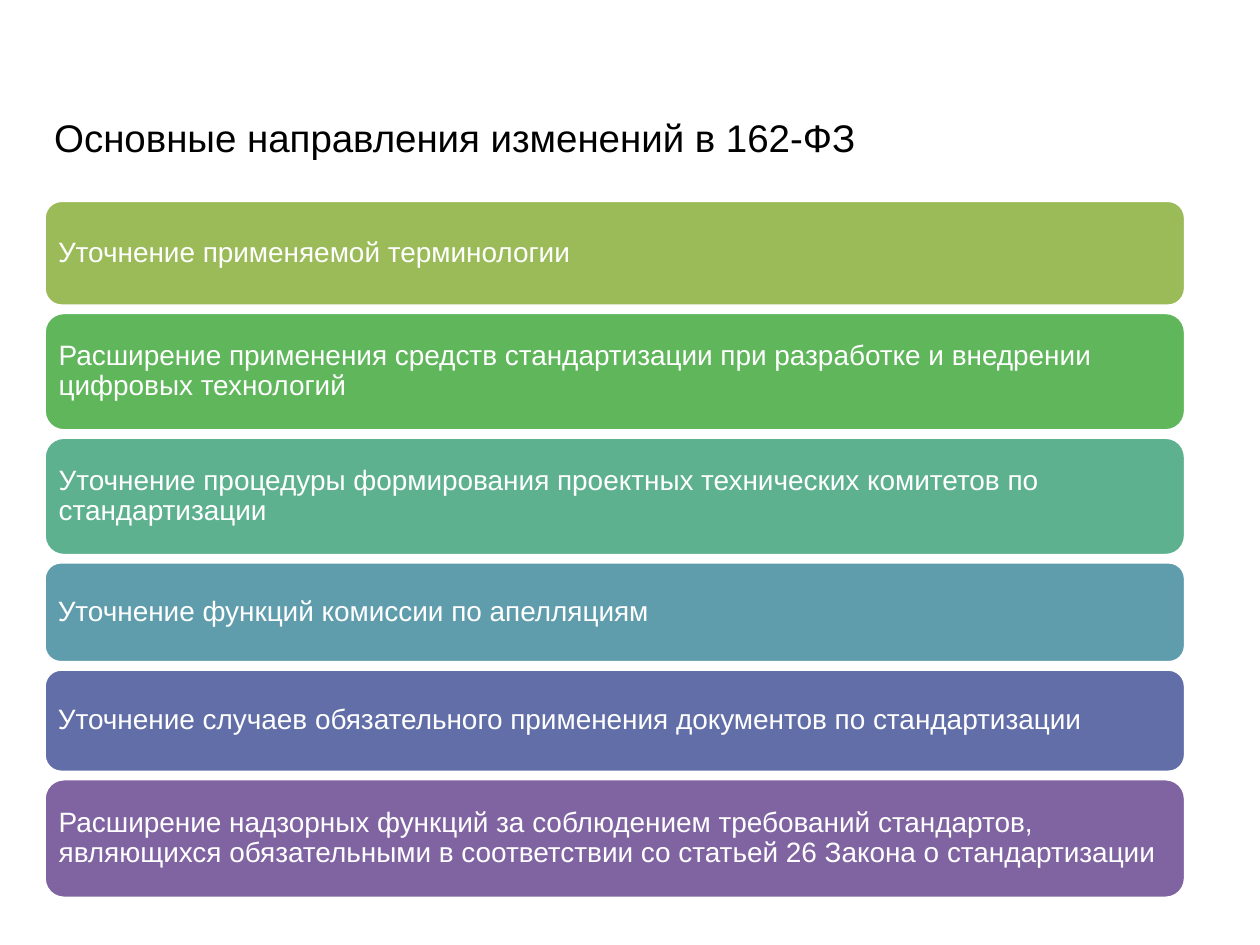
from pptx import Presentation
from pptx.dml.color import RGBColor
from pptx.enum.shapes import MSO_SHAPE as SHAPE
from pptx.enum.text import MSO_ANCHOR as ANCHOR, MSO_AUTO_SIZE as AUTO_SIZE, PP_ALIGN as ALIGN
from pptx.util import Inches, Pt

TITLE = "Основные направления изменений в 162-ФЗ"
LEFT, TOP, WIDTH, GAP = 0.35, 1.59, 9.06, 0.05

# Text, fill colour, height in inches
DIRECTIONS = [
    ("Уточнение применяемой терминологии", "9BBB59", 0.84),
    ("Расширение применения средств стандартизации при разработке и внедрении "
     "цифровых технологий", "5FB65B", 0.94),
    ("Уточнение процедуры формирования проектных технических комитетов по "
     "стандартизации", "5DB18E", 0.94),
    ("Уточнение функций комиссии по апелляциям", "5F9DAC", 0.8),
    ("Уточнение случаев обязательного применения документов по стандартизации",
     "626EA7", 0.82),
    ("Расширение надзорных функций за соблюдением требований стандартов, "
     "являющихся обязательными в соответствии со статьей 26 Закона о стандартизации",
     "8064A2", 0.95),
]


def rgb(color):
    return RGBColor.from_string(color)


def write(sp, text, size, color, anchor, inset, spacing):
    tf = sp.text_frame
    tf.auto_size = AUTO_SIZE.NONE
    tf.word_wrap = True
    tf.vertical_anchor = anchor
    tf.margin_left = tf.margin_right = tf.margin_top = tf.margin_bottom = Inches(inset)
    p = tf.paragraphs[0]
    p.alignment = ALIGN.LEFT
    p.line_spacing = spacing
    r = p.add_run()
    r.text = text
    r.font.name = "Arial"
    r.font.size = Pt(size)
    r.font.color.rgb = rgb(color)


def place_title(slide, text):
    title = slide.shapes.title
    title.left, title.top = Inches(0.43), Inches(0.99)
    title.width, title.height = Inches(9.41), Inches(0.39)
    write(title, text, size=22, color="000000", anchor=ANCHOR.TOP, inset=0, spacing=Pt(20))


def add_bar(slide, text, fill, top, height):
    sp = slide.shapes.add_shape(SHAPE.ROUNDED_RECTANGLE, Inches(LEFT), Inches(top),
                                Inches(WIDTH), Inches(height))
    sp.shadow.inherit = False
    sp.fill.solid()
    sp.fill.fore_color.rgb = rgb(fill)
    sp.line.color.rgb = rgb("FFFFFF")
    sp.line.width = Pt(2)
    write(sp, text, size=16, color="FFFFFF", anchor=ANCHOR.MIDDLE, inset=0.07, spacing=0.9)


def main():
    prs = Presentation()
    prs.slide_width, prs.slide_height = Inches(10), Inches(7.5)
    slide = prs.slides.add_slide(prs.slide_layouts[5])
    place_title(slide, TITLE)
    top = TOP
    for text, fill, height in DIRECTIONS:
        add_bar(slide, text, fill, top, height)
        top += height + GAP
    prs.save("out.pptx")


if __name__ == "__main__":
    main()
